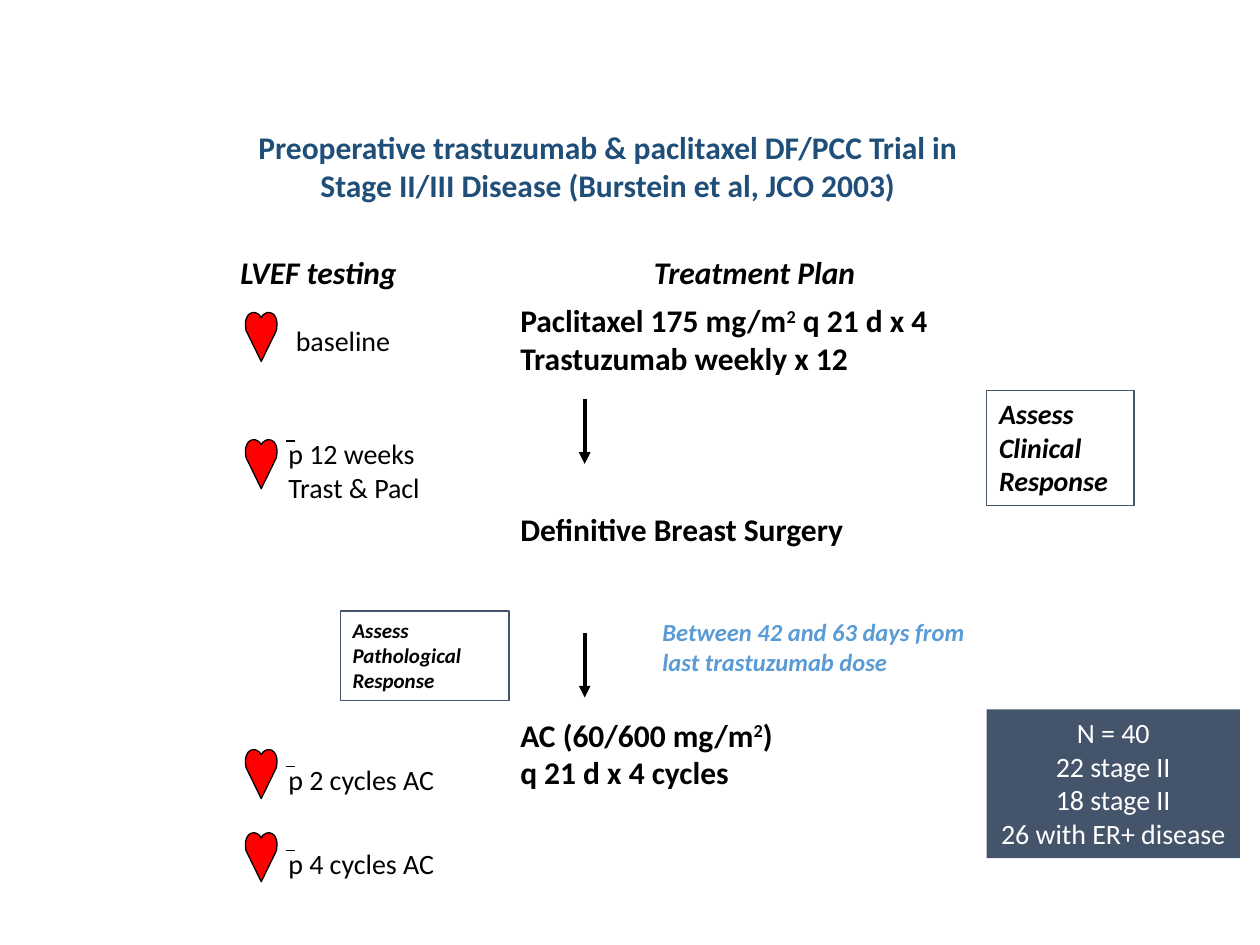
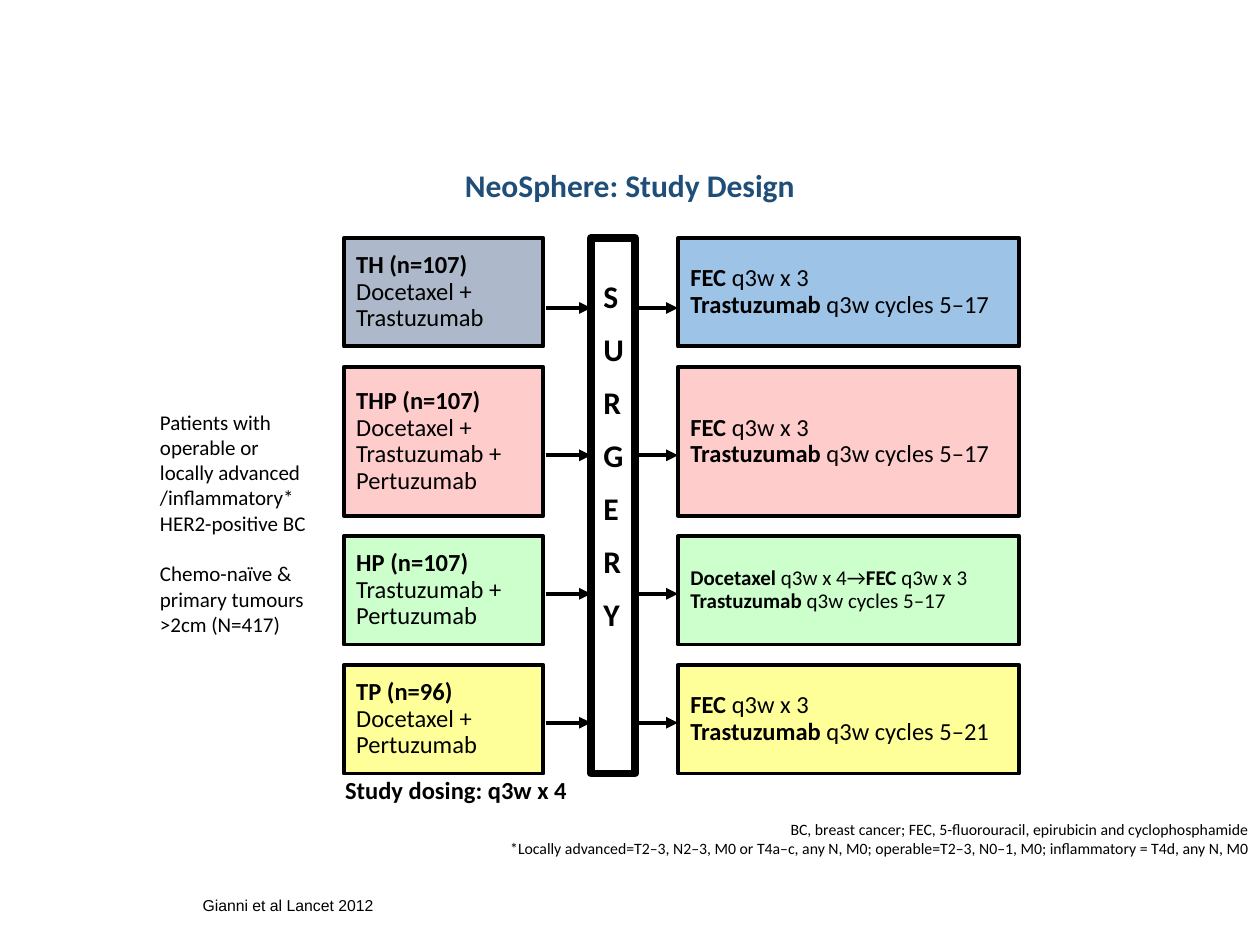
import collections

import pptx
import pptx.dml.color
import pptx.enum.shapes
import pptx.enum.text
import pptx.oxml.ns
import pptx.util
from lxml import etree

Pt = pptx.util.Pt
RGBColor = pptx.dml.color.RGBColor
ALIGN = pptx.enum.text.PP_ALIGN
ANCHOR = pptx.enum.text.MSO_ANCHOR
AUTO_SIZE = pptx.enum.text.MSO_AUTO_SIZE
RECTANGLE = pptx.enum.shapes.MSO_SHAPE.RECTANGLE
STRAIGHT = pptx.enum.shapes.MSO_CONNECTOR.STRAIGHT
qn = pptx.oxml.ns.qn

BLACK = RGBColor(0x00, 0x00, 0x00)
WHITE = RGBColor(0xFF, 0xFF, 0xFF)
NAVY = RGBColor(0x1F, 0x4E, 0x79)
SLATE = RGBColor(0x44, 0x54, 0x6A)
SKY = RGBColor(0x5B, 0x9B, 0xD5)
RED = RGBColor(0xFF, 0x00, 0x00)
GREY_BLUE = RGBColor(0xAD, 0xB9, 0xCA)
PALE_BLUE = RGBColor(0x9D, 0xC3, 0xE6)
PINK = RGBColor(0xFF, 0xCC, 0xCC)
MINT = RGBColor(0xCC, 0xFF, 0xCC)
YELLOW = RGBColor(0xFF, 0xFF, 0x99)

REGULAR = {"bold": False}
BOLD = {"bold": True}
BOLD_ITALIC = {"bold": True, "italic": True}
SUPERSCRIPT = "superscript"
SINGLE = {"line_spacing": 1.0}
TIGHT = {"line_spacing": 0.9}
HUGGING = {"word_wrap": False, "auto_size": AUTO_SIZE.SHAPE_TO_FIT_TEXT}
MIDDLE = {"vertical_anchor": ANCHOR.MIDDLE}

HEART_WIDTH = 18
HEART_LEFT_HALF = [
    (9, 3), (8.1, 1.5), (7, 0.7), (5.7, 0.1), (4.3, 0), (2.9, 0.4), (1.6, 1.4),
    (0.6, 3.1), (0.1, 4.9), (0, 6.8), (0.1, 8.5), (0.3, 10.2), (9, 28),
]

Area = collections.namedtuple("Area", "left top width height")


def apply_format(target, values):
    for name, value in values.items():
        setattr(target, name, value)


def in_points(lengths):
    return [Pt(length) for length in lengths]


def write_text(box, lines, size, style=REGULAR, color=BLACK, layout=SINGLE,
               frame=None, family="Calibri"):
    text = box.text_frame
    defaults = {"word_wrap": True, "auto_size": AUTO_SIZE.NONE,
                "vertical_anchor": ANCHOR.TOP}
    apply_format(text, {**defaults, **(frame or {})})
    for index, line in enumerate(lines):
        para = text.add_paragraph() if index else text.paragraphs[0]
        apply_format(para, {"alignment": ALIGN.LEFT, **layout})
        if index == 0:
            para.space_before = Pt(0)
        for piece in [line] if isinstance(line, str) else line:
            words, change = (piece, {}) if isinstance(piece, str) else piece
            span = para.add_run()
            span.text = words
            base = {"name": family, "size": Pt(size), **style}
            apply_format(span.font, base)
            span.font.color.rgb = color
            if change == SUPERSCRIPT:
                span._r.get_or_add_rPr().set("baseline", "30000")
            else:
                apply_format(span.font, change)


def add_text(page, area, lines, size, **options):
    box = page.shapes.add_textbox(*in_points(area))
    write_text(box, lines, size, **options)
    return box


def paint(shape, fill, line, weight):
    shape.shadow.inherit = False
    if fill is None:
        shape.fill.background()
    else:
        shape.fill.solid()
        shape.fill.fore_color.rgb = fill
    if line is None:
        shape.line.fill.background()
    else:
        shape.line.color.rgb = line
        shape.line.width = Pt(weight)


def add_panel(page, area, lines, size, fill=None, line=BLACK, weight=2.25, **options):
    panel = page.shapes.add_shape(RECTANGLE, *in_points(area))
    paint(panel, fill, line, weight)
    write_text(panel, lines, size, **options)
    return panel


def add_line(page, start, end, weight=2.25, arrow=True):
    line = page.shapes.add_connector(STRAIGHT, *in_points(start + end))
    line.line.color.rgb = BLACK
    line.line.width = Pt(weight)
    if arrow:
        etree.SubElement(line.line._get_or_add_ln(), qn("a:tailEnd"), type="triangle")
    etree.SubElement(line._element.spPr, qn("a:effectLst"))


def add_heart(page, left, top):
    mirrored = [(HEART_WIDTH - x, y) for x, y in reversed(HEART_LEFT_HALF[1:-1])]
    outline = [(Pt(left + x), Pt(top + y)) for x, y in HEART_LEFT_HALF + mirrored]
    builder = page.shapes.build_freeform(*outline[0])
    builder.add_line_segments(outline[1:], close=True)
    paint(builder.convert_to_shape(), RED, BLACK, 0.75)


def add_titled_page(deck, area, title, layout):
    page = deck.slides.add_slide(deck.slide_layouts[5])
    box = page.shapes.title
    box.left, box.top, box.width, box.height = in_points(area)
    write_text(box, [title], 18, style=BOLD, color=NAVY,
               layout={"alignment": ALIGN.CENTER, **layout}, frame=MIDDLE)
    return page


def add_heart_tests(page, area):
    left, top = area.left, area.top
    add_text(page, Area(left, top, 108.7, 29), ["LVEF testing"], 18,
             style=BOLD_ITALIC, frame=HUGGING)
    tests = [
        (37.5, 31.7, 40.4, 69, ["baseline"]),
        (110.2, 27.4, 105.1, 92, ["p 12 weeks", "Trast & Pacl"]),
        (287.3, 27.4, 291, 99.4, ["p 2 cycles AC"]),
        (334.8, 27.4, 339.1, 99.4, ["p 4 cycles AC"]),
    ]
    for heart_top, label_left, label_top, width, lines in tests:
        add_heart(page, left + 10, top + heart_top)
        label = Area(left + label_left, top + label_top, width, 7.2 + 19.5 * len(lines))
        add_text(page, label, lines, 16, frame=HUGGING)
        if lines[0].startswith("p "):
            bar = label.top + 5.8
            add_line(page, (label.left + 5.7, bar), (label.left + 10.7, bar), 0.75, False)


def add_treatment_plan(page, area):
    left, top = area.left, area.top
    add_text(page, Area(left + 76.3, top, 137.5, 29), ["Treatment Plan"], 18,
             style=BOLD_ITALIC, frame=HUGGING)
    steps = [
        (27.4, 251.3, [["Paclitaxel 175 mg/m", ("2", SUPERSCRIPT), " q 21 d x 4"],
                       "Trastuzumab weekly x 12"]),
        (147, 202.3, ["Definitive Breast Surgery"]),
        (264.3, 288.7, [["AC (60/600 mg/m", ("2", SUPERSCRIPT), ")"],
                        "q 21 d x 4 cycles"]),
    ]
    for step_top, width, lines in steps:
        add_text(page, Area(left, top + step_top, width, 7.2 + 22 * len(lines)),
                 lines, 18, style=BOLD)
    for arrow_top in (87, 220.5):
        add_line(page, (left + 43.9, top + arrow_top), (left + 43.9, top + arrow_top + 37))
    add_text(page, Area(left + 81.3, top + 208.2, 192.2, 41),
             ["Between 42 and 63 days from", "last trastuzumab dose"], 14,
             style=BOLD_ITALIC, color=SKY, frame=HUGGING)


def add_assessments(page):
    panels = [
        (Area(563.8, 223.2, 84.2, 65.5), "Clinical", 16),
        (Area(194.4, 349.2, 96.5, 51), "Pathological", 12),
    ]
    for area, kind, size in panels:
        add_panel(page, area, ["Assess", kind, "Response"], size, line=SLATE,
                  weight=0.75, style=BOLD_ITALIC)
    add_panel(page, Area(563.8, 405.4, 144.7, 85),
              ["N = 40", "22 stage II", "18 stage II", "26 with ER+ disease"], 16,
              fill=SLATE, line=None, color=WHITE, frame=HUGGING,
              layout={"alignment": ALIGN.CENTER})


def add_study_arms(page, area):
    left, top = area.left, area.top
    surgery = Area(left + 141.2, top, 25.2, area.height)
    follow_left = left + 190.9
    arms = [
        ("TH (n=107)", ["Docetaxel + Trastuzumab"], GREY_BLUE, PALE_BLUE, 62, 9),
        ("THP (n=107)", ["Docetaxel + Trastuzumab +", "Pertuzumab"], PINK, PINK, 85, 8),
        ("HP (n=107)", ["Trastuzumab + Pertuzumab"], MINT, MINT, 62, 2),
        ("TP (n=96)", ["Docetaxel + Pertuzumab"], YELLOW, YELLOW, 62, 2),
    ]
    gap = (area.height - sum(arm[4] for arm in arms)) / (len(arms) - 1)
    row_top = top
    for name, drugs, fill, follow_fill, height, drop in arms:
        add_panel(page, Area(left, row_top, 114, height),
                  [[(name, BOLD)], *drugs], 14, fill=fill, layout=TIGHT, frame=MIDDLE)
        first = [("FEC", BOLD), " q3w x 3"]
        size = 14
        if name.startswith("HP"):
            first = [("Docetaxel", BOLD), " q3w x 4→", *first]
            size = 12
        cycles = " q3w cycles 5–21" if name.startswith("TP") else " q3w cycles 5–17"
        add_panel(page, Area(follow_left, row_top, 195, height),
                  [first, [("Trastuzumab", BOLD), cycles]], size,
                  fill=follow_fill, layout=TIGHT, frame=MIDDLE)
        arrow = row_top + height / 2 + drop
        add_line(page, (left + 115.3, arrow), (surgery.left, arrow))
        add_line(page, (surgery.left + surgery.width, arrow), (follow_left, arrow))
        row_top += height + gap
    add_panel(page, surgery, list("SURGERY"), 18, weight=4.5, style=BOLD,
              layout={"space_before": Pt(8.75)}, frame={"margin_top": Pt(22)})
    add_text(page, Area(left - 6.4, top + area.height - 2.8, 235.4, 31),
             ["Study dosing: q3w x 4"], 14, style=BOLD)


def add_patients(page, area):
    box = add_text(page, area, [
        "Patients with operable or", "locally advanced /inflammatory*",
        "HER2-positive BC", "Chemo-naïve &", "primary tumours", ">2cm (N=417)",
    ], 12, frame={**MIDDLE, "margin_left": Pt(4.3), "margin_right": Pt(4.3)})
    box.text_frame.paragraphs[3].space_before = Pt(14.6)


def add_notes_and_citation(page):
    add_text(page, Area(188.6, 465.1, 531.4, 28), [
        "BC, breast cancer; FEC, 5-fluorouracil, epirubicin and cyclophosphamide",
        "*Locally advanced=T2–3, N2–3, M0 or T4a–c, any N, M0; operable=T2–3, N0–1, M0; "
        "inflammatory = T4d, any N, M0",
    ], 9, layout={"alignment": ALIGN.RIGHT})
    add_text(page, Area(108.7, 508.3, 124, 18), ["Gianni et al Lancet 2012"], 9,
             family="Arial")


def main():
    deck = pptx.Presentation()
    deck.slide_width, deck.slide_height = in_points((720, 540))

    page = add_titled_page(
        deck, Area(131.8, 69.1, 431.3, 51),
        "Preoperative trastuzumab & paclitaxel DF/PCC Trial in "
        "Stage II/III Disease (Burstein et al, JCO 2003)", SINGLE)
    add_heart_tests(page, Area(130.3, 141.1, 160, 370))
    add_treatment_plan(page, Area(290.2, 141.1, 290, 320))
    add_assessments(page)

    page = add_titled_page(deck, Area(50, 92, 620, 30), "NeoSphere: Study Design", TIGHT)
    add_patients(page, Area(87.1, 229.7, 104.4, 138.2))
    add_study_arms(page, Area(196.5, 136, 386, 306))
    add_notes_and_citation(page)

    deck.save("out.pptx")


if __name__ == "__main__":
    main()
